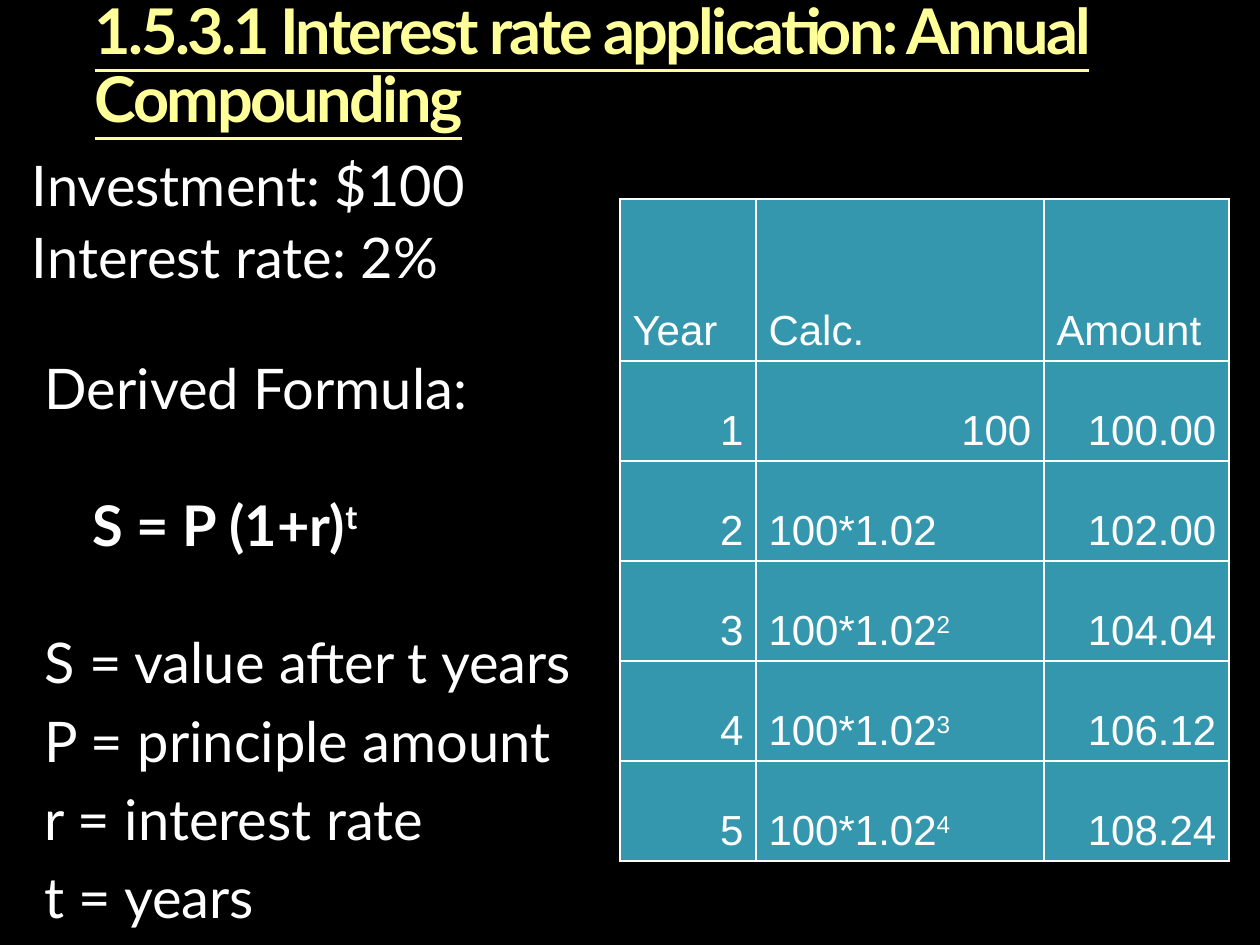
from dataclasses import dataclass

from lxml.etree import SubElement
from pptx import Presentation
from pptx.dml.color import RGBColor
from pptx.enum.text import MSO_ANCHOR, MSO_AUTO_SIZE, PP_ALIGN
from pptx.oxml.ns import qn
from pptx.util import Emu, Pt

PX_PER_INCH = 126
BLACK = RGBColor(0x00, 0x00, 0x00)
WHITE = RGBColor(0xFF, 0xFF, 0xFF)
YELLOW = RGBColor(0xFF, 0xFF, 0x99)
TEAL = RGBColor(0x34, 0x97, 0xAE)

COL_WIDTHS = (136, 288, 185)
HEADER_HEIGHT, ROW_HEIGHT = 162, 100
HEADERS = ("Year", "Calc.", "Amount")
AMOUNTS = ("100.00", "102.00", "104.04", "106.12", "108.24")


@dataclass(frozen=True)
class Line:
    text: str
    sup: str = ""
    bold: bool = False
    before: float = 6.4
    indent: int = 0


GIVEN = (Line("Investment: $100", before=0), Line("Interest rate: 2%"))
FORMULA = (
    Line("Derived Formula:", before=0),
    Line("S = P (1+r)", sup="t", bold=True, before=40, indent=48),
    Line("S = value after t years", before=40),
    Line("P = principle amount"),
    Line("r = interest rate"),
    Line("t = years"),
)


def px(n: int) -> Emu:
    return Emu(round(n * 914400 / PX_PER_INCH))


def add_run(p, text: str, *, size: int, font: str = "Lato", color: RGBColor = WHITE,
            bold: bool = False, underline: bool = False, sup: bool = False):
    r = p.add_run()
    r.text = text
    r.font.size = Pt(size)
    r.font.name = font
    r.font.color.rgb = color
    r.font.bold = bold
    r.font.underline = underline
    if sup:
        r.font._element.set("baseline", "30000")
    return r


def place(sp, left: int, top: int, width: int, height: int) -> None:
    sp.left, sp.top, sp.width, sp.height = map(px, (left, top, width, height))


def clear_insets(tf) -> None:
    tf.margin_left = tf.margin_right = tf.margin_top = tf.margin_bottom = 0


def add_title(slide) -> None:
    sp = slide.shapes.title
    place(sp, 95, 0, 1071, 137)
    tf = sp.text_frame
    clear_insets(tf)
    tf.word_wrap = True
    tf.auto_size = MSO_AUTO_SIZE.NONE
    tf.vertical_anchor = MSO_ANCHOR.TOP
    p = tf.paragraphs[0]
    p.alignment = PP_ALIGN.LEFT
    p.line_spacing = 0.9
    r = add_run(p, "1.5.3.1 Interest rate application: Annual Compounding",
                size=36, color=YELLOW, bold=True, underline=True)
    r.font._element.set("spc", "-150")


def add_lines(slide, top: int, lines: tuple[Line, ...], spacing: float = 1.0):
    sp = slide.shapes.add_textbox(px(32), px(top), px(588), px(210))
    tf = sp.text_frame
    tf.word_wrap = True
    for i, line in enumerate(lines):
        p = tf.add_paragraph() if i else tf.paragraphs[0]
        p.line_spacing = spacing
        p.space_before = Pt(line.before)
        if line.indent:
            p._p.get_or_add_pPr().set("marL", str(px(line.indent)))
        add_run(p, line.text, size=32, bold=line.bold)
        if line.sup:
            add_run(p, line.sup, size=32, bold=line.bold, sup=True)
    return tf


def add_borders(cell) -> None:
    tc_pr = cell._tc.get_or_add_tcPr()
    for side in ("lnL", "lnR", "lnT", "lnB"):
        ln = SubElement(tc_pr, qn(f"a:{side}"), w=str(Pt(1)))
        fill = SubElement(ln, qn("a:solidFill"))
        SubElement(fill, qn("a:srgbClr"), val=str(WHITE))


def fill_cell(cell, text: str, sup: str = "", right: bool = False) -> None:
    add_borders(cell)
    cell.fill.solid()
    cell.fill.fore_color.rgb = TEAL
    cell.vertical_anchor = MSO_ANCHOR.BOTTOM
    p = cell.text_frame.paragraphs[0]
    p.alignment = PP_ALIGN.RIGHT if right else PP_ALIGN.LEFT
    add_run(p, text, size=24, font="Arial")
    if sup:
        add_run(p, sup, size=24, font="Arial", sup=True)


def add_compounding_table(slide) -> None:
    row_count = len(AMOUNTS) + 1
    height = HEADER_HEIGHT + ROW_HEIGHT * len(AMOUNTS)
    table = slide.shapes.add_table(row_count, len(HEADERS), px(620), px(199),
                                   px(sum(COL_WIDTHS)), px(height)).table
    for column, width in zip(table.columns, COL_WIDTHS):
        column.width = px(width)
    for i, row in enumerate(table.rows):
        row.height = px(ROW_HEIGHT if i else HEADER_HEIGHT)
    for col, header in enumerate(HEADERS):
        fill_cell(table.cell(0, col), header)
    for year, amount in enumerate(AMOUNTS, start=1):
        fill_cell(table.cell(year, 0), str(year), right=True)
        if year == 1:
            fill_cell(table.cell(year, 1), "100", right=True)
        else:
            power = str(year - 1) if year > 2 else ""
            fill_cell(table.cell(year, 1), "100*1.02", sup=power)
        fill_cell(table.cell(year, 2), amount, right=True)


def main() -> None:
    prs = Presentation()
    prs.slide_width, prs.slide_height = px(1260), px(945)
    slide = prs.slides.add_slide(prs.slide_layouts[5])
    slide.background.fill.solid()
    slide.background.fill.fore_color.rgb = BLACK
    add_title(slide)
    clear_insets(add_lines(slide, 158, GIVEN, spacing=0.9))
    add_compounding_table(slide)
    add_lines(slide, 347, FORMULA)
    prs.save("out.pptx")


if __name__ == "__main__":
    main()
